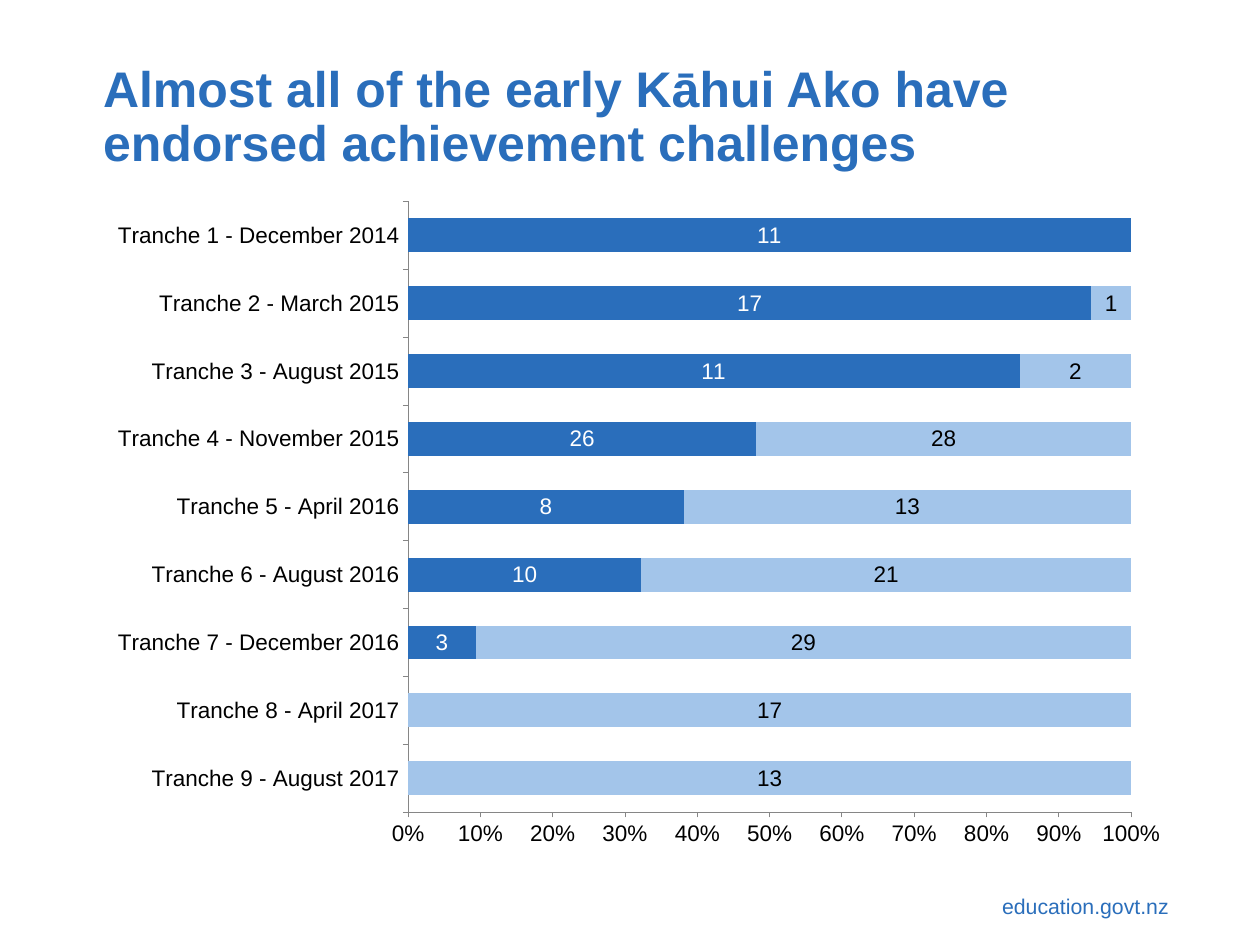
from dataclasses import dataclass

from lxml.etree import SubElement
from pptx import Presentation
from pptx.chart.data import CategoryChartData
from pptx.dml.color import RGBColor
from pptx.enum.chart import XL_CHART_TYPE, XL_LABEL_POSITION, XL_TICK_MARK
from pptx.enum.text import MSO_ANCHOR, MSO_AUTO_SIZE, PP_ALIGN
from pptx.oxml.ns import qn
from pptx.util import Pt

PX = 914400 // 90


@dataclass(frozen=True)
class Theme:
    """Hold the colours and type sizes of the slide."""
    font: str = "Arial"
    blue: str = "2A6EBB"
    pale: str = "A3C5EA"
    black: str = "000000"
    white: str = "FFFFFF"
    axis: str = "868686"
    title: int = 40
    chart: int = 18
    footer: int = 17


THEME = Theme()
TRANCHES = [
    ("Tranche 1 - December 2014", 11, 0),
    ("Tranche 2 - March 2015", 17, 1),
    ("Tranche 3 - August 2015", 11, 2),
    ("Tranche 4 - November 2015", 26, 28),
    ("Tranche 5 - April 2016", 8, 13),
    ("Tranche 6 - August 2016", 10, 21),
    ("Tranche 7 - December 2016", 3, 29),
    ("Tranche 8 - April 2017", None, 17),
    ("Tranche 9 - August 2017", None, 13),
]


def set_attributes(target, **values):
    """Set each named value on the target."""
    for name, value in values.items():
        setattr(target, name, value)


def set_font(font, size, color, bold=False):
    """Apply the theme typeface with a size and colour."""
    set_attributes(font, name=THEME.font, size=Pt(size), bold=bold)
    font.color.rgb = RGBColor.from_string(color)


def place(shape, left, top, width, height):
    """Position a shape in px."""
    set_attributes(shape, left=left * PX, top=top * PX,
                   width=width * PX, height=height * PX)


def write_text(shape, text, size, alignment, bold=False, **frame_values):
    """Write one blue paragraph into a shape."""
    frame = shape.text_frame
    set_attributes(frame, word_wrap=True, margin_left=13 * PX, margin_right=13 * PX,
                   margin_top=6 * PX, margin_bottom=6 * PX, **frame_values)
    paragraph = frame.paragraphs[0]
    paragraph.alignment = alignment
    run = paragraph.add_run()
    run.text = text
    set_font(run.font, size, THEME.blue, bold)
    return paragraph


def add_title(slide, text):
    """Fill the title placeholder."""
    title = slide.shapes.title
    place(title, 90, 47, 985, 142)
    paragraph = write_text(title, text, THEME.title, PP_ALIGN.LEFT, True,
                           vertical_anchor=MSO_ANCHOR.MIDDLE, auto_size=MSO_AUTO_SIZE.NONE)
    paragraph.line_spacing = 0.9


def add_footer(slide, text):
    """Add the web address at the lower right."""
    footer = slide.shapes.add_textbox(896 * PX, 887 * PX, 286 * PX, 38 * PX)
    write_text(footer, text, THEME.footer, PP_ALIGN.RIGHT)


def set_plot_layout(chart, **fractions):
    """Fix the inner plot area as fractions of the chart."""
    plot_area = chart._chartSpace.chart.plotArea
    layout = plot_area.find(qn("c:layout"))
    if layout is None:
        layout = SubElement(plot_area, qn("c:layout"))
        plot_area.insert(0, layout)
    manual = SubElement(layout, qn("c:manualLayout"))
    settings = {"layoutTarget": "inner", "xMode": "edge", "yMode": "edge", **fractions}
    for name, value in settings.items():
        SubElement(manual, qn(f"c:{name}")).set("val", str(value))


def format_axis(axis):
    """Give an axis a thin grey line with outside ticks."""
    set_attributes(axis, has_major_gridlines=False, major_tick_mark=XL_TICK_MARK.OUTSIDE,
                   minor_tick_mark=XL_TICK_MARK.NONE)
    axis.format.line.color.rgb = RGBColor.from_string(THEME.axis)
    axis.format.line.width = Pt(0.75)
    set_font(axis.tick_labels.font, THEME.chart, THEME.black)


def format_series(series, fill, label_color):
    """Colour a series and label its non-zero values."""
    series.format.fill.solid()
    series.format.fill.fore_color.rgb = RGBColor.from_string(fill)
    labels = series.data_labels
    set_attributes(labels, show_value=True, number_format="0;;",
                   number_format_is_linked=False, position=XL_LABEL_POSITION.CENTER)
    set_font(labels.font, THEME.chart, label_color)


def add_tranche_chart(slide):
    """Add the stacked bars, first tranche at the top."""
    categories, first, second = zip(*reversed(TRANCHES))
    data = CategoryChartData()
    data.categories = categories
    data.add_series("Series 1", first)
    data.add_series("Series 2", second)
    chart = slide.shapes.add_chart(XL_CHART_TYPE.BAR_STACKED_100, 97 * PX, 188 * PX,
                                   1084 * PX, 672 * PX, data).chart
    set_attributes(chart, has_legend=False, has_title=False)
    set_font(chart.font, THEME.chart, THEME.black)
    set_plot_layout(chart, x=0.287, y=0.02, w=0.667, h=0.909)
    set_attributes(chart.plots[0], gap_width=100, overlap=100, vary_by_categories=False)
    for axis in (chart.category_axis, chart.value_axis):
        format_axis(axis)
    set_attributes(chart.value_axis, minimum_scale=0, maximum_scale=1, major_unit=0.1)
    set_attributes(chart.value_axis.tick_labels, number_format="0%",
                   number_format_is_linked=False)
    styles = [(THEME.blue, THEME.white), (THEME.pale, THEME.black)]
    for series, style in zip(chart.plots[0].series, styles):
        format_series(series, *style)


def main():
    """Build and save the slide."""
    presentation = Presentation()
    set_attributes(presentation, slide_width=1260 * PX, slide_height=945 * PX)
    slide = presentation.slides.add_slide(presentation.slide_layouts[5])
    add_footer(slide, "education.govt.nz")
    add_title(slide, "Almost all of the early Kāhui Ako have endorsed achievement challenges")
    add_tranche_chart(slide)
    presentation.save("out.pptx")


if __name__ == "__main__":
    main()
